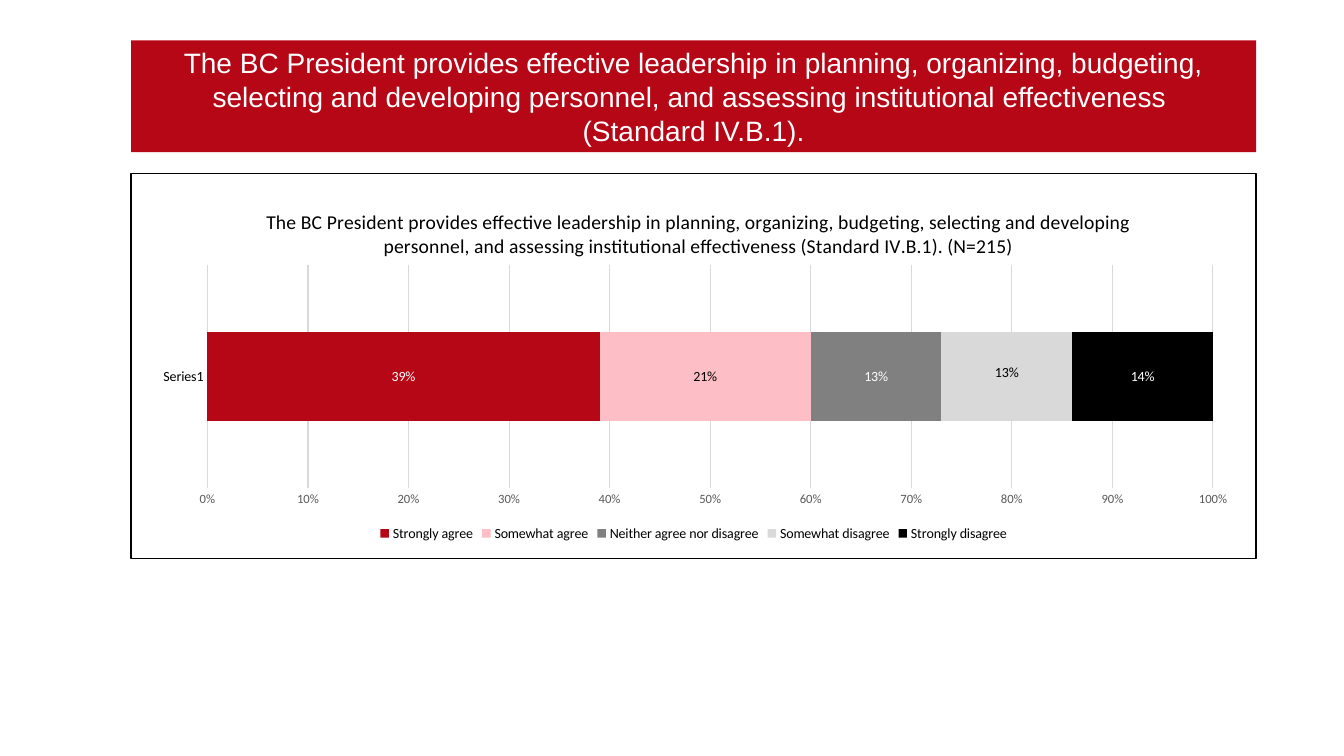
from lxml import etree
from pptx import Presentation
from pptx.chart.data import CategoryChartData
from pptx.dml.color import RGBColor
from pptx.enum.chart import XL_CHART_TYPE, XL_LABEL_POSITION, XL_LEGEND_POSITION, XL_TICK_MARK
from pptx.enum.shapes import MSO_SHAPE
from pptx.enum.text import MSO_ANCHOR, PP_ALIGN
from pptx.oxml.ns import qn
from pptx.util import Pt

PX = 9144
RED = RGBColor(0xB6, 0x07, 0x17)
PINK = RGBColor(0xFD, 0xBF, 0xC5)
GRAY = RGBColor(0x80, 0x80, 0x80)
LIGHT = RGBColor(0xD9, 0xD9, 0xD9)
AXIS_GRAY = RGBColor(0x59, 0x59, 0x59)
BLACK = RGBColor(0, 0, 0)
WHITE = RGBColor(255, 255, 255)
RECTANGLE = MSO_SHAPE.RECTANGLE
BAR_STACKED = XL_CHART_TYPE.BAR_STACKED
LABEL_CENTER = XL_LABEL_POSITION.CENTER
LEGEND_BOTTOM = XL_LEGEND_POSITION.BOTTOM
NO_TICK = XL_TICK_MARK.NONE
CENTER = PP_ALIGN.CENTER
MIDDLE = MSO_ANCHOR.MIDDLE

STATEMENT = ("The BC President provides effective leadership in planning, organizing, "
             "budgeting, selecting and developing personnel, and assessing "
             "institutional effectiveness ")
STANDARD = "(Standard IV.B.1)."
ANSWERS = [
    ("Strongly agree", 0.39, RED, WHITE),
    ("Somewhat agree", 0.21, PINK, BLACK),
    ("Neither agree nor disagree", 0.13, GRAY, WHITE),
    ("Somewhat disagree", 0.13, LIGHT, BLACK),
    ("Strongly disagree", 0.14, BLACK, WHITE),
]


def style_font(font, size, color, name="Calibri"):
    font.size = Pt(size)
    font.name = name
    font.bold = False
    font.color.rgb = color


def set_layout(parent, index, values):
    for old in parent.findall(qn("c:layout")):
        parent.remove(old)
    layout = etree.Element(qn("c:layout"))
    manual = etree.SubElement(layout, qn("c:manualLayout"))
    for tag, value in values.items():
        etree.SubElement(manual, qn(f"c:{tag}")).set("val", str(value))
    parent.insert(index, layout)


prs = Presentation()
prs.slide_width = 1333 * PX
prs.slide_height = 750 * PX
slide = prs.slides.add_slide(prs.slide_layouts[6])

frame = slide.shapes.add_shape(RECTANGLE, 130 * PX, 172 * PX, 1116 * PX, 382 * PX)
frame.shadow.inherit = False
frame.fill.background()
frame.line.color.rgb = BLACK
frame.line.width = Pt(1)

banner = slide.shapes.add_shape(RECTANGLE, 130 * PX, 40 * PX, 1116 * PX, 111 * PX)
banner.shadow.inherit = False
banner.fill.solid()
banner.fill.fore_color.rgb = RED
banner.line.fill.background()
heading = banner.text_frame
heading.word_wrap = True
heading.vertical_anchor = MIDDLE
heading.text = STATEMENT + "\n" + STANDARD
for paragraph in heading.paragraphs:
    paragraph.alignment = CENTER
    style_font(paragraph.runs[0].font, 20, WHITE, "Arial")

survey = CategoryChartData(number_format="0%")
survey.categories = ["Series1"]
for answer, share, _, _ in ANSWERS:
    survey.add_series(answer, [share])
chart = slide.shapes.add_chart(
    BAR_STACKED, 140 * PX, 185 * PX, 1096 * PX, 356 * PX, survey).chart
style_font(chart.font, 10, BLACK)

chart.has_title = True
title = chart.chart_title
title.text_frame.text = STATEMENT + STANDARD + " (N=215)"
style_font(title.text_frame.paragraphs[0].runs[0].font, 14, BLACK)

chart.has_legend = True
chart.legend.position = LEGEND_BOTTOM
chart.legend.include_in_layout = False
style_font(chart.legend.font, 10, BLACK)

plot = chart.plots[0]
plot.gap_width = 150
plot.overlap = 100
plot.vary_by_categories = False
for series, (_, _, color, label_color) in zip(plot.series, ANSWERS):
    series.format.fill.solid()
    series.format.fill.fore_color.rgb = color
    labels = series.data_labels
    labels.show_value = True
    labels.number_format = "0%"
    labels.number_format_is_linked = False
    labels.position = LABEL_CENTER
    style_font(labels.font, 10, label_color)

raised_label = plot.series[3].points[0].data_label
style_font(raised_label.font, 10, BLACK)
raised_label.position = LABEL_CENTER

for axis, size, color in ((chart.category_axis, 10, BLACK),
                          (chart.value_axis, 9, AXIS_GRAY)):
    axis.major_tick_mark = NO_TICK
    axis.minor_tick_mark = NO_TICK
    style_font(axis.tick_labels.font, size, color)

answers_axis = chart.category_axis
answers_axis.has_major_gridlines = False
share_axis = chart.value_axis
share_axis.minimum_scale = 0
share_axis.maximum_scale = 1
share_axis.major_unit = 0.1
share_axis.tick_labels.number_format = "0%"
share_axis.tick_labels.number_format_is_linked = False
share_axis.has_major_gridlines = True
share_axis.format.line.fill.background()
for line in (answers_axis.format.line, share_axis.major_gridlines.format.line):
    line.color.rgb = LIGHT
    line.width = Pt(0.75)

plot_area = chart.element.xpath(".//c:plotArea")[0]
set_layout(plot_area, 0, {"layoutTarget": "inner", "xMode": "edge", "yMode": "edge",
                          "x": 0.06, "y": 0.22, "w": 0.91, "h": 0.62})
set_layout(chart.element.xpath(".//c:title")[0], 1,
           {"xMode": "edge", "yMode": "edge", "x": 0.11, "y": 0.05})
set_layout(chart.element.xpath(".//c:dLbl")[0], 1, {"x": 0, "y": -0.01})

prs.save("out.pptx")
